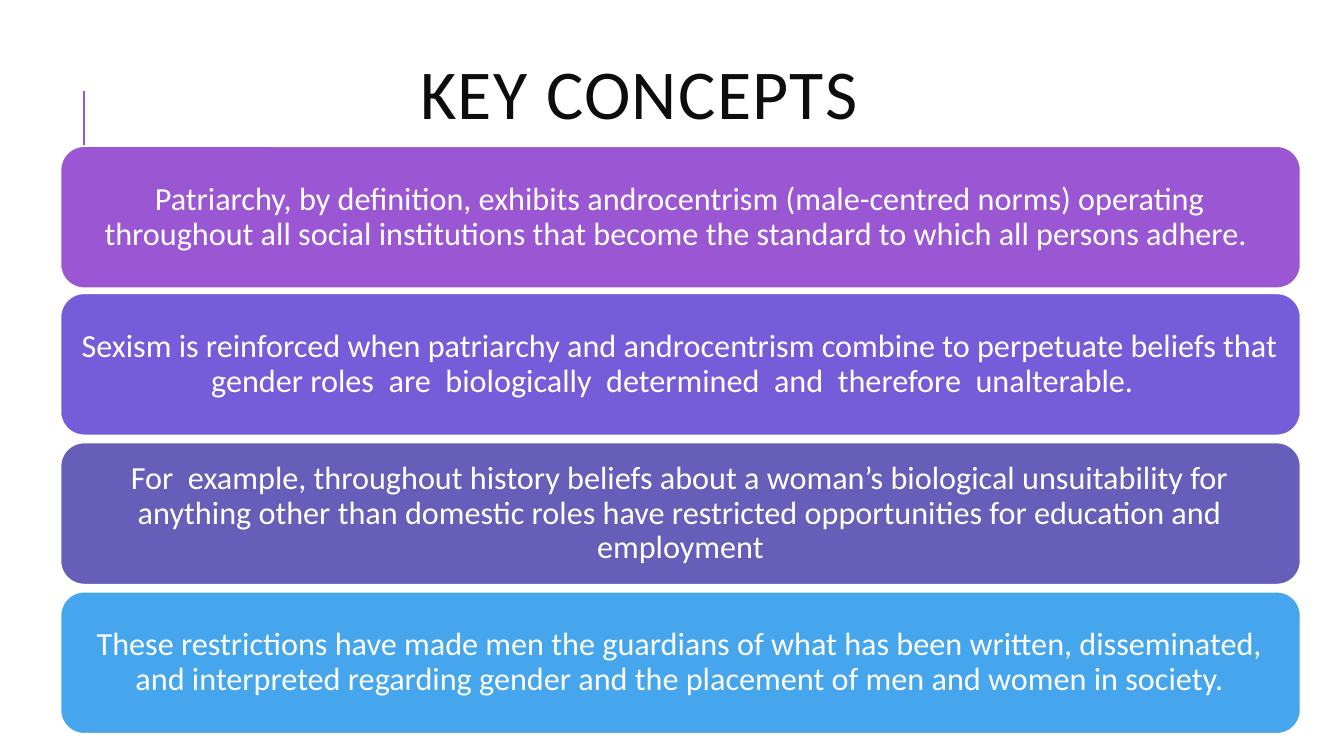
from dataclasses import dataclass

from pptx import Presentation
from pptx.dml.color import RGBColor
from pptx.enum.shapes import MSO_CONNECTOR as Conn, MSO_SHAPE as Shape
from pptx.enum.text import MSO_ANCHOR as Anchor, PP_ALIGN as Align
from pptx.oxml.ns import qn
from pptx.util import Emu, Pt
from lxml.etree import SubElement

EMU_PER_PX = 9144  # 100 px to the inch


@dataclass(frozen=True)
class Theme:
    font: str = "Calibri"
    title: str = "0D0D0D"
    accent: str = "9B57D3"
    white: str = "FFFFFF"
    title_pt: int = 50
    card_pt: int = 23
    rule_pt: float = 1.5
    border_pt: float = 1.25


@dataclass(frozen=True)
class Card:
    top: int
    fill: str
    text: str


THEME = Theme()
CARD_LEFT, CARD_WIDTH, CARD_HEIGHT, CARD_INSET = 60, 1230, 141, 10
CARDS = [
    Card(145, THEME.accent,
         "Patriarchy, by definition, exhibits androcentrism (male-centred norms) operating "
         "throughout all social institutions that become the standard to which all persons adhere. "),
    Card(291, "755DD9",
         "Sexism is reinforced when patriarchy and androcentrism combine to perpetuate beliefs that "
         "gender roles  are  biologically  determined  and  therefore  unalterable.  "),
    Card(439, "665EB8",
         "For  example, throughout history beliefs about a woman’s biological unsuitability for "
         "anything other than domestic roles have restricted opportunities for education and employment"),
    Card(587, "45A5ED",
         "These restrictions have made men the guardians of what has been written, disseminated, "
         "and interpreted regarding gender and the placement of men and women in society."),
]


def px(n: int) -> Emu:
    return Emu(n * EMU_PER_PX)


def rgb(value: str) -> RGBColor:
    return RGBColor.from_string(value)


def write(tf, text: str, *, size: int, color: str, line_spacing: float,
          inset: int, tracking: int = 0) -> None:
    """Centre one paragraph of text in a frame; tracking is in 1/100 pt."""
    tf.word_wrap = True
    tf.vertical_anchor = Anchor.MIDDLE
    tf.margin_left = tf.margin_right = tf.margin_top = tf.margin_bottom = px(inset)
    p = tf.paragraphs[0]
    p.alignment = Align.CENTER
    p.line_spacing = line_spacing
    r = p.add_run()
    r.text = text
    r.font.name = THEME.font
    r.font.size = Pt(size)
    r.font.color.rgb = rgb(color)
    if tracking:
        r.font._element.set("spc", str(tracking))


def add_rule(s, x: int, top: int, bottom: int) -> None:
    line = s.shapes.add_connector(Conn.STRAIGHT, px(x), px(top), px(x), px(bottom))
    line.line.color.rgb = rgb(THEME.accent)
    line.line.width = Pt(THEME.rule_pt)
    SubElement(line._element.spPr, qn("a:effectLst"))


def add_title(s, text: str) -> None:
    box = s.shapes.add_textbox(px(111), px(17), px(1063), px(164))
    write(box.text_frame, text, size=THEME.title_pt, color=THEME.title,
          line_spacing=0.8, inset=5, tracking=100)


def add_card(s, card: Card) -> None:
    sp = s.shapes.add_shape(Shape.ROUNDED_RECTANGLE, px(CARD_LEFT), px(card.top),
                            px(CARD_WIDTH), px(CARD_HEIGHT))
    sp.shadow.inherit = False
    sp.fill.solid()
    sp.fill.fore_color.rgb = rgb(card.fill)
    sp.line.color.rgb = rgb(THEME.white)
    sp.line.width = Pt(THEME.border_pt)
    write(sp.text_frame, card.text, size=THEME.card_pt, color=THEME.white,
          line_spacing=0.9, inset=CARD_INSET)


def main() -> None:
    prs = Presentation()
    prs.slide_width, prs.slide_height = px(1333), px(750)
    s = prs.slides.add_slide(prs.slide_layouts[6])

    # Heading with its accent rule
    add_rule(s, 83, 90, 190)
    add_title(s, "KEY CONCEPTS ")

    # Stack of concept cards
    for card in CARDS:
        add_card(s, card)

    prs.save("out.pptx")


if __name__ == "__main__":
    main()
